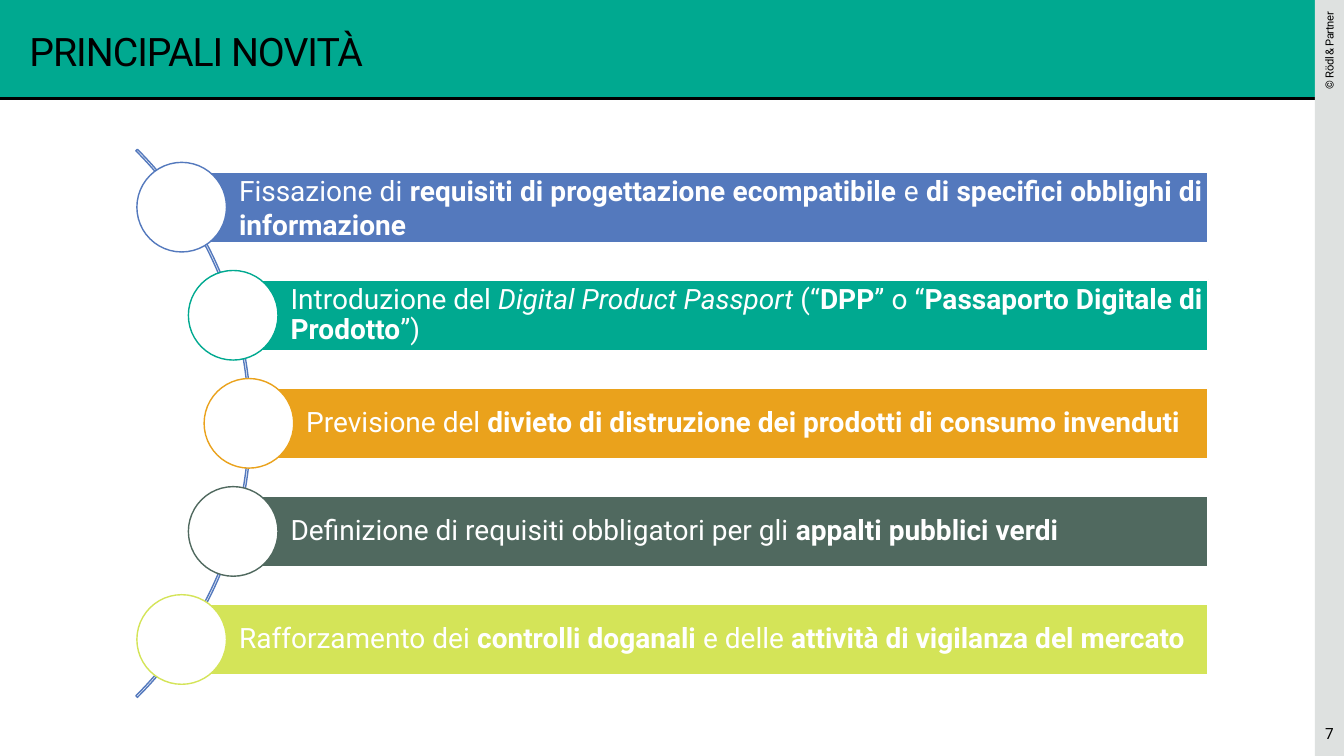
from pptx import Presentation
from pptx.dml.color import RGBColor
from pptx.enum.shapes import MSO_CONNECTOR, MSO_SHAPE
from pptx.enum.text import MSO_ANCHOR, PP_ALIGN
from pptx.oxml.ns import qn
from pptx.util import Pt
from lxml import etree

RECT, OVAL, ARC = MSO_SHAPE.RECTANGLE, MSO_SHAPE.OVAL, MSO_SHAPE.BLOCK_ARC
STRAIGHT = MSO_CONNECTOR.STRAIGHT
MIDDLE = MSO_ANCHOR.MIDDLE
LEFT, CENTER, RIGHT, JUSTIFY = (PP_ALIGN.LEFT, PP_ALIGN.CENTER,
                                PP_ALIGN.RIGHT, PP_ALIGN.JUSTIFY)

FONT = "Roboto"
BLACK = RGBColor(0x00, 0x00, 0x00)
WHITE = RGBColor(0xFF, 0xFF, 0xFF)
GREY = RGBColor(0xDE, 0xE1, 0xE0)
BLUE = RGBColor(0x54, 0x79, 0xBD)
GREEN = RGBColor(0x00, 0xA9, 0x90)
ORANGE = RGBColor(0xEA, 0xA2, 0x1C)
SLATE = RGBColor(0x50, 0x69, 0x5F)
LIME = RGBColor(0xD4, 0xE4, 0x58)

SLIDE_W, SLIDE_H = 960, 540
HEADER_H = 70.6
STRIP_X = 939.2
BAR_RIGHT, BAR_H = 863, 51
CIRCLE_D = 64
ROW_Y, ROW_PITCH = 148, 77.2
ARC_D, ARC_CENTER_X = 553.7, -97.6

# Bar colour, circle centre, alignment, line spacing, runs (text, style)
NEWS = [
    (BLUE, 129.8, JUSTIFY, 1.0, [
        ("Fissazione di ", ""), ("requisiti di progettazione ecompatibile", "b"),
        (" e ", ""), ("di specifici obblighi di informazione", "b")]),
    (GREEN, 166.6, JUSTIFY, 0.9, [
        ("Introduzione del ", ""), ("Digital Product Passport", "i"),
        (" (“", ""), ("DPP", "b"), ("” o “", ""),
        ("Passaporto Digitale di Prodotto", "b"), ("”)", "")]),
    (ORANGE, 177.8, JUSTIFY, 0.9, [
        ("Previsione del ", ""),
        ("divieto di distruzione dei prodotti di consumo invenduti", "b")]),
    (SLATE, 166.6, LEFT, 0.9, [
        ("Definizione di requisiti obbligatori per gli ", ""),
        ("appalti pubblici verdi", "b")]),
    (LIME, 129.8, LEFT, 0.9, [
        ("Rafforzamento dei ", ""), ("controlli doganali", "b"),
        (" e delle", ""), (" attività di vigilanza del mercato", "b")]),
]


def add_shape(slide, kind, x, y, w, h, fill=None, line=None, weight=1):
    s = slide.shapes.add_shape(kind, Pt(x), Pt(y), Pt(w), Pt(h))
    s.shadow.inherit = False
    if fill is None:
        s.fill.background()
    else:
        s.fill.solid()
        s.fill.fore_color.rgb = fill
    if line is None:
        s.line.fill.background()
    else:
        s.line.color.rgb = line
        s.line.width = Pt(weight)
    return s


def add_rule(slide, x1, x2, y):
    c = slide.shapes.add_connector(STRAIGHT, Pt(x1), Pt(y), Pt(x2), Pt(y))
    c.line.color.rgb = BLACK
    c.line.width = Pt(2.25)
    etree.SubElement(c.element.spPr, qn("a:effectLst"))


def set_frame(tf, insets=(0, 0, 0, 0), wrap=True):
    tf.word_wrap = wrap
    tf.vertical_anchor = MIDDLE
    tf.margin_left, tf.margin_top, tf.margin_right, tf.margin_bottom = map(Pt, insets)


def write_runs(p, runs, size, color, align=LEFT, spacing=0):
    p.alignment = align
    for text, style in runs:
        r = p.add_run()
        r.text = text
        r.font.name = FONT
        r.font.size = Pt(size)
        r.font.color.rgb = color
        r.font.bold = style == "b"
        r.font.italic = style == "i"
        if spacing:
            r._r.get_or_add_rPr().set("spc", str(spacing))


def add_label(slide, text, x, y, w, h, size, align, insets=(0, 0, 0, 0),
              wrap=True, rotation=0, spacing=0):
    s = slide.shapes.add_textbox(Pt(x), Pt(y), Pt(w), Pt(h))
    s.rotation = rotation
    set_frame(s.text_frame, insets, wrap)
    write_runs(s.text_frame.paragraphs[0], [(text, "")], size, BLACK, align, spacing)


def set_title(slide, text):
    title = slide.shapes.title
    title.left, title.top, title.width, title.height = Pt(21), Pt(21), Pt(901), Pt(31)
    set_frame(title.text_frame)
    write_runs(title.text_frame.paragraphs[0], [(text, "")], 28, BLACK, spacing=-70)
    # Bring the title in front of the header band
    title.element.getparent().append(title.element)


def add_news(slide, y, color, x, align, line_spacing, runs):
    bar = add_shape(slide, RECT, x, y - BAR_H / 2, BAR_RIGHT - x, BAR_H,
                    color, WHITE, 1.5)
    set_frame(bar.text_frame, (41, 4, 4, 4))
    p = bar.text_frame.paragraphs[0]
    p.line_spacing = line_spacing
    write_runs(p, runs, 20, WHITE, align)
    add_shape(slide, OVAL, x - CIRCLE_D / 2, y - CIRCLE_D / 2,
              CIRCLE_D, CIRCLE_D, WHITE, color)


def main():
    prs = Presentation()
    prs.slide_width, prs.slide_height = Pt(SLIDE_W), Pt(SLIDE_H)
    slide = prs.slides.add_slide(prs.slide_layouts[5])

    # Header and side strip
    add_shape(slide, RECT, 0, 0, SLIDE_W, HEADER_H, GREEN)
    add_rule(slide, 0, STRIP_X, HEADER_H)
    add_shape(slide, RECT, STRIP_X, 0, SLIDE_W - STRIP_X, SLIDE_H, GREY)
    add_label(slide, "© Rödl & Partner", 913.7, 25.2, 71.3, 20.9, 8, RIGHT,
              insets=(0, 0, 8.6, 0), wrap=False, rotation=270, spacing=-30)
    set_title(slide, "PRINCIPALI NOVITÀ")
    add_label(slide, "7", STRIP_X, 508.3, SLIDE_W - STRIP_X, 31.7, 11, CENTER)

    # Arc behind the circles
    arc_y = ROW_Y + ROW_PITCH * (len(NEWS) - 1) / 2
    arc = add_shape(slide, ARC, ARC_CENTER_X - ARC_D / 2, arc_y - ARC_D / 2,
                    ARC_D, ARC_D, line=BLUE)
    for i, value in enumerate((189, 27, 0.0028)):
        arc.adjustments[i] = value

    # Bars with their circles
    for i, item in enumerate(NEWS):
        add_news(slide, ROW_Y + i * ROW_PITCH, *item)

    prs.save("out.pptx")


if __name__ == "__main__":
    main()
